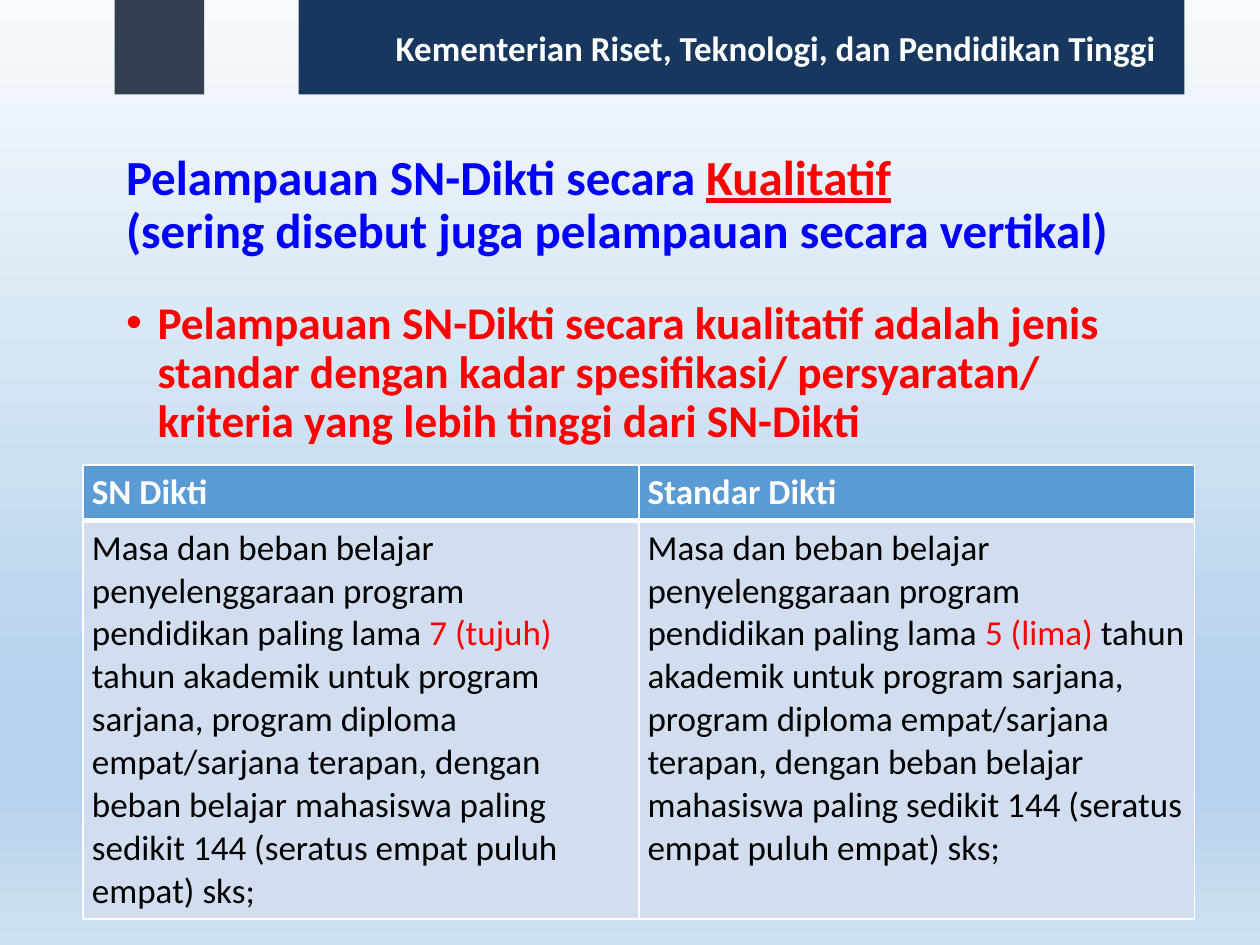
from dataclasses import dataclass

from lxml import etree
from pptx import Presentation
from pptx.dml.color import RGBColor
from pptx.enum import shapes, text
from pptx.oxml.ns import qn
from pptx.util import Inches, Pt

WIDTH, HEIGHT = Inches(10), Inches(7.5)
FONT = "Calibri"
BLUE = RGBColor(0x00, 0x00, 0xFF)
RED = RGBColor(0xFF, 0x00, 0x00)
BLACK = RGBColor(0x00, 0x00, 0x00)
WHITE = RGBColor(0xFF, 0xFF, 0xFF)
SLATE = RGBColor(0x33, 0x3F, 0x50)
NAVY = RGBColor(0x17, 0x37, 0x5E)
HEADER_FILL = RGBColor(0x5B, 0x9B, 0xD5)
BODY_FILL = RGBColor(0xD2, 0xDE, 0xEF)
SKY_STOPS = [(0, "F7FAFD"), (74, "B5D2EC"), (83, "B5D2EC"), (100, "CEE1F2")]


@dataclass
class Box:
    """A rectangle given as shares of the slide's size."""
    left: float
    top: float
    width: float
    height: float

    def lengths(self) -> tuple[int, int, int, int]:
        return (int(self.left * WIDTH), int(self.top * HEIGHT),
                int(self.width * WIDTH), int(self.height * HEIGHT))


@dataclass
class Piece:
    """A stretch of text with its own look."""
    words: str
    color: RGBColor
    bold: bool = False
    underline: bool = False


def write(paragraph, pieces: list[Piece], size: float) -> None:
    for piece in pieces:
        run = paragraph.add_run()
        run.text = piece.words
        run.font.name, run.font.size = FONT, Pt(size)
        run.font.bold = piece.bold
        run.font.underline = piece.underline
        run.font.color.rgb = piece.color


def place(shape, box: Box) -> None:
    shape.left, shape.top, shape.width, shape.height = box.lengths()


def add_bar(slide, box: Box, color: RGBColor):
    bar = slide.shapes.add_shape(shapes.MSO_SHAPE.RECTANGLE, *box.lengths())
    bar.shadow.inherit = False
    bar.fill.solid()
    bar.fill.fore_color.rgb = color
    bar.line.fill.background()
    return bar


def set_sky(slide) -> None:
    fill = slide.background.fill
    fill.gradient()
    fill.gradient_angle = 270
    stops = slide.background._cSld.find(".//" + qn("a:gsLst"))
    for stop in list(stops):
        stops.remove(stop)
    for position, color in SKY_STOPS:
        stop = etree.SubElement(stops, qn("a:gs"), pos=str(position * 1000))
        etree.SubElement(stop, qn("a:srgbClr"), val=color)


def style_cell(cell, color: RGBColor, top: float, bottom: float) -> None:
    properties = cell._tc.get_or_add_tcPr()
    for side, points in (("L", 1), ("R", 1), ("T", top), ("B", bottom)):
        line = etree.SubElement(properties, qn(f"a:ln{side}"), w=str(Pt(points)))
        solid = etree.SubElement(line, qn("a:solidFill"))
        etree.SubElement(solid, qn("a:srgbClr"), val=str(WHITE))
    cell.fill.solid()
    cell.fill.fore_color.rgb = color
    cell.margin_left = cell.margin_right = Inches(0.07)
    cell.margin_top = cell.margin_bottom = Inches(0.05)


def study_limit(years: str) -> list[Piece]:
    return [
        Piece("Masa dan beban belajar penyelenggaraan program pendidikan "
              "paling lama ", BLACK),
        Piece(f"{years} ", RED),
        Piece("tahun akademik untuk program sarjana, program diploma "
              "empat/sarjana terapan, dengan beban belajar mahasiswa paling "
              "sedikit 144 (seratus empat puluh empat) sks;", BLACK),
    ]


def main() -> None:
    presentation = Presentation()
    presentation.slide_width, presentation.slide_height = WIDTH, HEIGHT
    slide = presentation.slides.add_slide(presentation.slide_layouts[1])
    set_sky(slide)

    # Title
    title = slide.shapes.title
    place(title, Box(0.09, 0.15, 0.843, 0.136))
    title.text_frame.auto_size = text.MSO_AUTO_SIZE.NONE
    title.text_frame.vertical_anchor = text.MSO_ANCHOR.MIDDLE
    paragraph = title.text_frame.paragraphs[0]
    paragraph.alignment = text.PP_ALIGN.LEFT
    paragraph.line_spacing = 0.9
    write(paragraph, [Piece("Pelampauan SN-Dikti secara ", BLUE, True),
                      Piece("Kualitatif", RED, True, True)], 28)
    paragraph.add_line_break()
    write(paragraph, [Piece("(sering disebut juga pelampauan secara vertikal)",
                            BLUE, True)], 28)

    # Definition
    body = slide.placeholders[1]
    place(body, Box(0.09, 0.311, 0.837, 0.2))
    body.text_frame.auto_size = text.MSO_AUTO_SIZE.NONE
    paragraph = body.text_frame.paragraphs[0]
    paragraph.line_spacing, paragraph.space_before = 0.9, Pt(10)
    properties = paragraph._p.get_or_add_pPr()
    properties.set("marL", str(Inches(0.25)))
    properties.set("indent", str(-Inches(0.25)))
    etree.SubElement(properties, qn("a:buFont"), typeface="Arial")
    etree.SubElement(properties, qn("a:buChar"), char="•")
    write(paragraph, [Piece(
        "Pelampauan SN-Dikti secara kualitatif adalah jenis standar dengan kadar "
        "spesifikasi/ persyaratan/ kriteria yang lebih tinggi dari SN-Dikti",
        RED, True)], 25.9)

    # Header bars
    add_bar(slide, Box(0.091, 0, 0.071, 0.1), SLATE)
    banner = add_bar(slide, Box(0.237, 0, 0.703, 0.1), NAVY)
    banner.text_frame.word_wrap = True
    banner.text_frame.margin_left = Inches(0.77)
    banner.text_frame.vertical_anchor = text.MSO_ANCHOR.MIDDLE
    paragraph = banner.text_frame.paragraphs[0]
    paragraph.alignment = text.PP_ALIGN.LEFT
    write(paragraph, [Piece("Kementerian Riset, Teknologi, dan Pendidikan Tinggi",
                            WHITE, True)], 20)

    # Comparison table
    rows = [
        [[Piece("SN Dikti", WHITE, True)], [Piece("Standar Dikti", WHITE, True)]],
        [study_limit("7 (tujuh)"), study_limit("5 (lima)")],
    ]
    looks = [(HEADER_FILL, 1, 3), (BODY_FILL, 3, 1)]
    table = slide.shapes.add_table(
        2, 2, *Box(0.066, 0.492, 0.882, 0.479).lengths()).table
    table.rows[0].height, table.rows[1].height = Inches(0.43), Inches(3.16)
    for row, (cells, look) in enumerate(zip(rows, looks)):
        for column, pieces in enumerate(cells):
            cell = table.cell(row, column)
            style_cell(cell, *look)
            write(cell.text_frame.paragraphs[0], pieces, 20)

    presentation.save("out.pptx")


if __name__ == "__main__":
    main()
